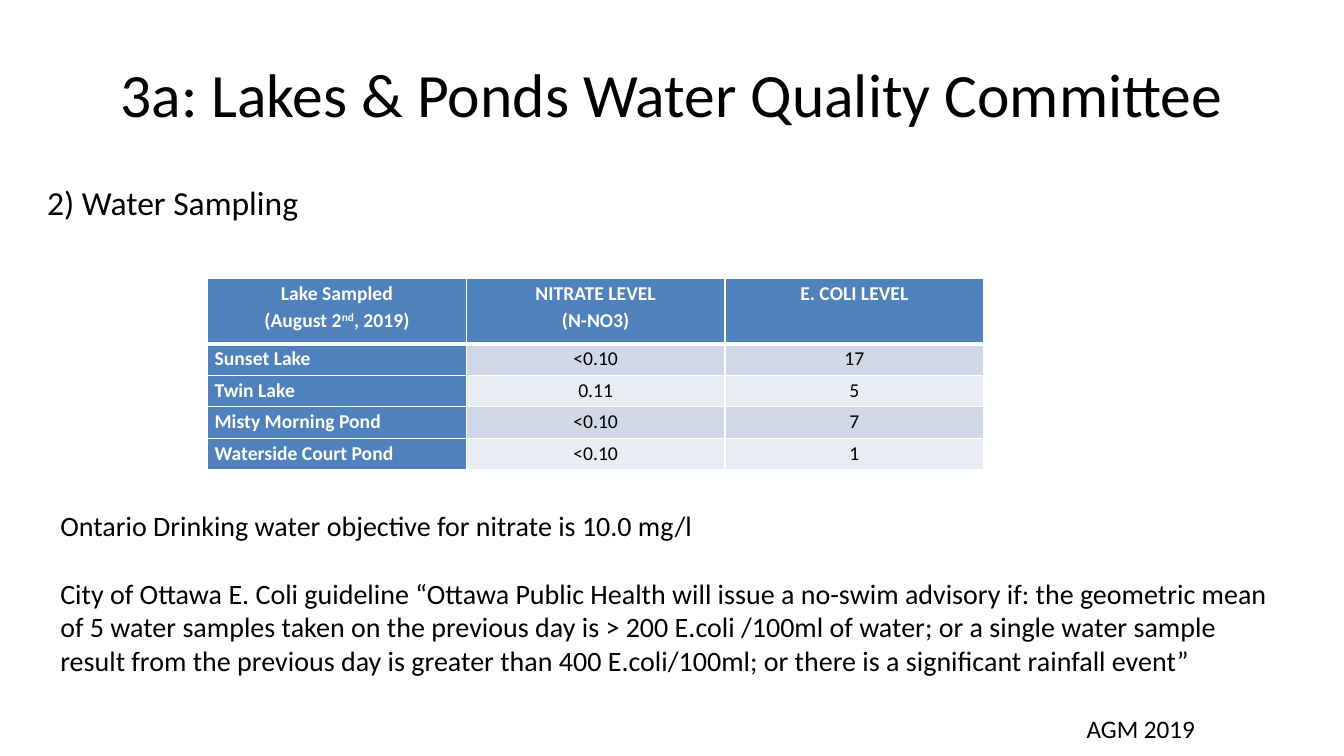
from lxml import etree
from pptx import Presentation
from pptx.dml.color import RGBColor
from pptx.enum import text
from pptx.oxml import ns
from pptx.util import Pt

FONT = "Calibri"
COLORS = {
    "text": "000000",
    "light": "FFFFFF",
    "header": "4F81BD",
    "odd_band": "D0D8E8",
    "even_band": "E9EDF4",
}
HEADINGS = [
    [["Lake Sampled"], ["(August 2", "nd", ", 2019)"]],
    [["NITRATE LEVEL"], ["(N-NO3)"]],
    [["E. COLI LEVEL"]],
]
SAMPLES = [
    ("Sunset Lake", "<0.10", "17"),
    ("Twin Lake", "0.11", "5"),
    ("Misty Morning Pond", "<0.10", "7"),
    ("Waterside Court Pond", "<0.10", "1"),
]
NOTES = [
    "Ontario Drinking water objective for nitrate is 10.0 mg/l",
    "City of Ottawa E. Coli guideline “Ottawa Public Health will issue a no-swim "
    "advisory if: the geometric mean of 5 water samples taken on the previous day "
    "is > 200 E.coli /100ml of water; or a single water sample result from the "
    "previous day is greater than 400 E.coli/100ml; or there is a significant "
    "rainfall event”",
]


def rgb(name):
    return RGBColor.from_string(COLORS[name])


def style_paragraph(paragraph, size, color="text", bold=False):
    font = paragraph.font
    font.name, font.size, font.bold = FONT, Pt(size), bold
    font.color.rgb = rgb(color)


def add_title(slide, box, words):
    title = slide.shapes.title
    title.left, title.top, title.width, title.height = map(Pt, box)
    title.text_frame.text = words
    title.text_frame.vertical_anchor = text.MSO_ANCHOR.MIDDLE
    paragraph = title.text_frame.paragraphs[0]
    paragraph.alignment = text.PP_ALIGN.CENTER
    style_paragraph(paragraph, 44)


def add_text(slide, box, paragraphs, size, gap=0):
    """Add a wrapping text box with the given gap between paragraphs."""
    frame = slide.shapes.add_textbox(*map(Pt, box)).text_frame
    frame.word_wrap = True
    frame.text = "\n".join(paragraphs)
    for index, paragraph in enumerate(frame.paragraphs):
        paragraph.space_before = Pt(gap if index else 0)
        style_paragraph(paragraph, size)


def set_borders(cell, widths):
    properties = cell._tc.get_or_add_tcPr()
    for side, width in zip("LRTB", widths):
        line = etree.SubElement(properties, ns.qn(f"a:ln{side}"), w=str(Pt(width)))
        fill = etree.SubElement(line, ns.qn("a:solidFill"))
        etree.SubElement(fill, ns.qn("a:srgbClr"), val=COLORS["light"])


def fill_cell(cell, lines, row, column):
    """Write lines, each a list of runs whose second run is superscript."""
    heading = row == 0 or column == 0
    set_borders(cell, (1, 1, 3 if row == 1 else 1, 3 if row == 0 else 1))
    cell.fill.solid()
    band = "odd_band" if row % 2 else "even_band"
    cell.fill.fore_color.rgb = rgb("header" if heading else band)
    cell.margin_left = cell.margin_right = Pt(5)
    cell.margin_top = cell.margin_bottom = Pt(0)
    frame = cell.text_frame
    for index, runs in enumerate(lines):
        paragraph = frame.add_paragraph() if index else frame.paragraphs[0]
        for position, words in enumerate(runs):
            run = paragraph.add_run()
            run.text = words
            if position == 1:
                run.font._element.set("baseline", "30000")
        centred = row == 0 or column > 0
        paragraph.alignment = text.PP_ALIGN.CENTER if centred else text.PP_ALIGN.LEFT
        paragraph.line_spacing = 1.15
        style_paragraph(paragraph, 14, "light" if heading else "text", heading)


def add_sample_table(slide, box, header_height):
    rows = [HEADINGS] + [[[[value]] for value in sample] for sample in SAMPLES]
    left, top, width, height = box
    table = slide.shapes.add_table(
        len(rows), len(HEADINGS), Pt(left), Pt(top), Pt(width), Pt(height)
    ).table
    for column in table.columns:
        column.width = Pt(width / len(HEADINGS))
    for row, cells in enumerate(rows):
        body_height = (height - header_height) / len(SAMPLES)
        table.rows[row].height = Pt(body_height if row else header_height)
        for column, lines in enumerate(cells):
            fill_cell(table.cell(row, column), lines, row, column)


def add_sampling_slide(presentation):
    slide = presentation.slides.add_slide(presentation.slide_layouts[5])
    add_title(slide, (48, 21.6, 864, 90), "3a: Lakes & Ponds Water Quality Committee")
    add_text(slide, (26.6, 126.7, 343.4, 36), ["2) Water Sampling"], 24)
    add_text(slide, (36, 360, 885.6, 128), NOTES, 20, gap=24)
    add_sample_table(slide, (148.3, 198.7, 554.4, 136.8), 46.8)
    add_text(slide, (769, 506.2, 98, 29), ["AGM 2019"], 18)


def main():
    presentation = Presentation()
    presentation.slide_width, presentation.slide_height = Pt(960), Pt(540)
    add_sampling_slide(presentation)
    presentation.save("out.pptx")


if __name__ == "__main__":
    main()
